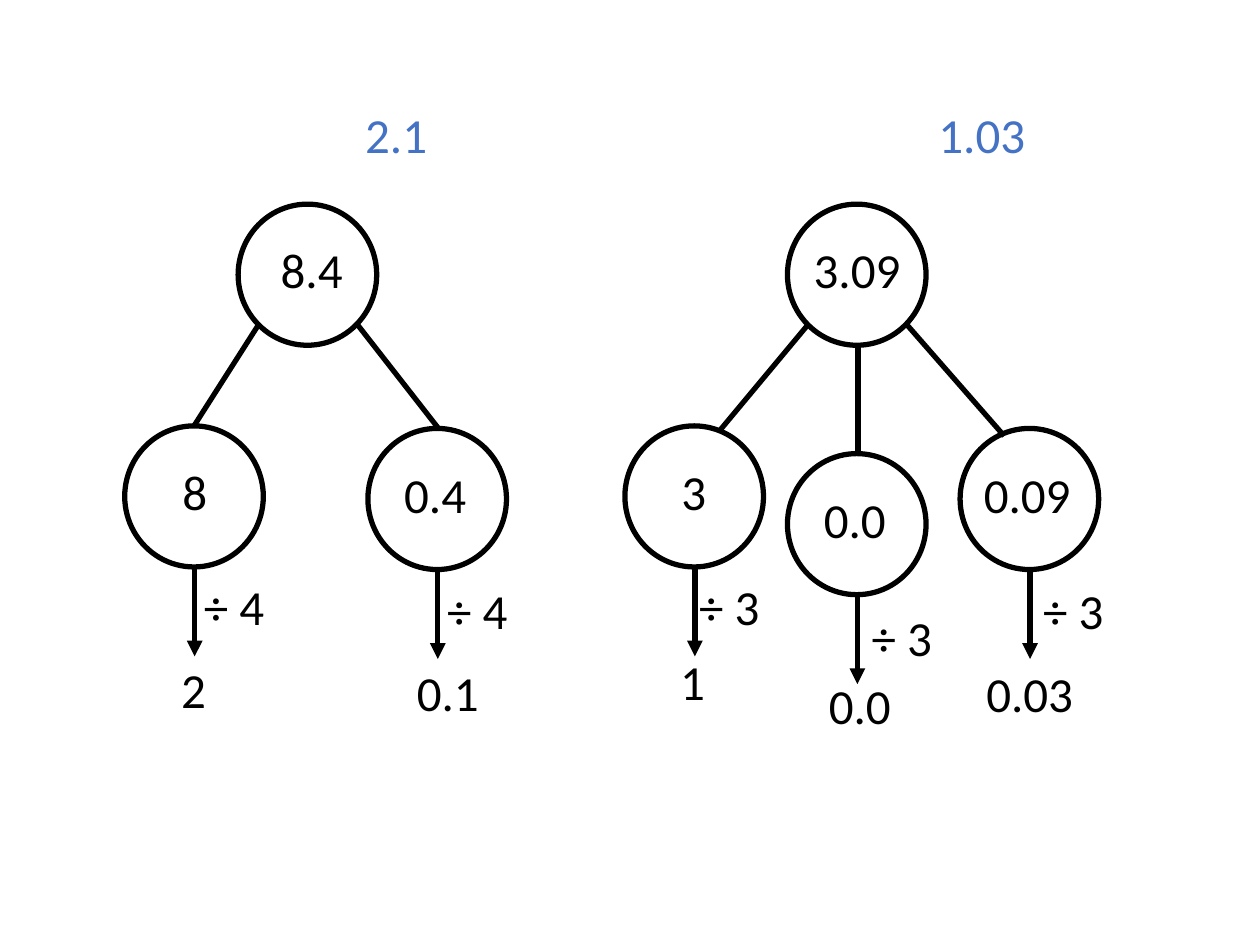
from pptx import Presentation, util as u
from pptx.dml.color import RGBColor
from pptx.enum import shapes, text
from pptx.oxml import ns
from lxml import etree

BLACK = RGBColor(0x00, 0x00, 0x00)
WHITE = RGBColor(0xFF, 0xFF, 0xFF)
BLUE = RGBColor(0x44, 0x72, 0xC4)

deck = Presentation()
deck.slide_width, deck.slide_height = u.Inches(10), u.Inches(7.5)
slide = deck.slides.add_slide(deck.slide_layouts[6])

# Grid of 100 columns by 75 rows
COL = deck.slide_width / 100
ROW = deck.slide_height / 75
WIDE, HIGH = 11, 11.2
FONT = {"name": "Calibri", "size": u.Pt(28)}
FRAME = {"word_wrap": False, "auto_size": text.MSO_AUTO_SIZE.SHAPE_TO_FIT_TEXT}
SPAN = {1: 4, 3: 7, 4: 9}  # label width by number of characters


def label(home, words, x, y, hue=BLACK):
    """Write words centred on a grid point."""
    wide = 7.8 if "÷" in words else SPAN[len(words)]
    box = home.add_textbox(int((x - wide / 2) * COL), int((y - 2.85) * ROW),
                           int(wide * COL), int(5.7 * ROW))
    for key, val in FRAME.items():
        setattr(box.text_frame, key, val)
    run = box.text_frame.paragraphs[0].add_run()
    run.text = words
    for key, val in FONT.items():
        setattr(run.font, key, val)
    run.font.color.rgb = hue


def link(home, x1, y1, x2, y2, arrow=False):
    """Join two grid points, with an arrowhead if asked."""
    line = home.add_connector(shapes.MSO_CONNECTOR.STRAIGHT, int(x1 * COL),
                              int(y1 * ROW), int(x2 * COL), int(y2 * ROW))
    line.line.color.rgb = BLACK
    line.line.width = u.Pt(3)
    if arrow:
        etree.SubElement(line.line._get_or_add_ln(), ns.qn("a:tailEnd"), type="triangle")
    etree.SubElement(line._element.spPr, ns.qn("a:effectLst"))


# Each tree: root (words, x, label shift), divisor, answer (words, x), parts
# Each part: words, centre, branch start and end, label shift,
#            divisor shift, result, result shift
trees = [
    (("8.4", 24.4, 0.4), "÷ 4", ("2.1", 31.5), [
        ("8", 15.4, 39.4, (20.5, 25.8, 15.4, 33.8), 0.1, (3.7, 8.7), "2", (0, 15.3)),
        ("0.4", 34.7, 39.6, (28.4, 25.8, 34.8, 34), -0.1, (3.7, 8.8), "0.1", (0.9, 15.3)),
    ]),
    (("3.09", 68, 0.1), "÷ 3", ("1.03", 78), [
        ("3", 55.1, 39.4, (64.1, 25.8, 57.1, 34.2), 0, (3.3, 8.7), "1", (-0.1, 14.7)),
        ("0.0", 68, 41.6, (68.1, 27.4, 68.1, 35.9), -0.1, (4.1, 9), "0.0", (0.3, 14.4)),
        ("0.09", 81.7, 39.6, (72, 25.8, 79.7, 34.6), -0.1, (4, 8.8), "0.03", (0.1, 15.4)),
    ]),
]

for (top, mid, push), split, answer, parts in trees:
    # Part-whole tree
    tree = slide.shapes.add_group_shape().shapes
    for x, y in [(mid, 21.8)] + [part[1:3] for part in parts]:
        ring = tree.add_shape(shapes.MSO_SHAPE.OVAL, int((x - WIDE / 2) * COL),
                              int((y - HIGH / 2) * ROW), int(WIDE * COL), int(HIGH * ROW))
        ring.shadow.inherit = False
        ring.fill.solid()
        ring.fill.fore_color.rgb = WHITE
        ring.line.color.rgb = BLACK
        ring.line.width = u.Pt(3)
    label(tree, top, mid + push, 21.35)
    for words, x, y, branch, move, *_ in parts:
        link(tree, *branch)
        label(tree, words, x + move, y - 0.4)

    # Division of each part
    for words, x, y, branch, move, (dx, dy), result, (rx, ry) in parts:
        link(slide.shapes, x + 0.05, y + 5.7, x + 0.05, y + 12.7, arrow=True)
        label(slide.shapes, split, x + dx, y + dy)
        label(slide.shapes, result, x + rx, y + ry)

    # Answer
    label(slide.shapes, *answer, 10.65, BLUE)

deck.save("out.pptx")
